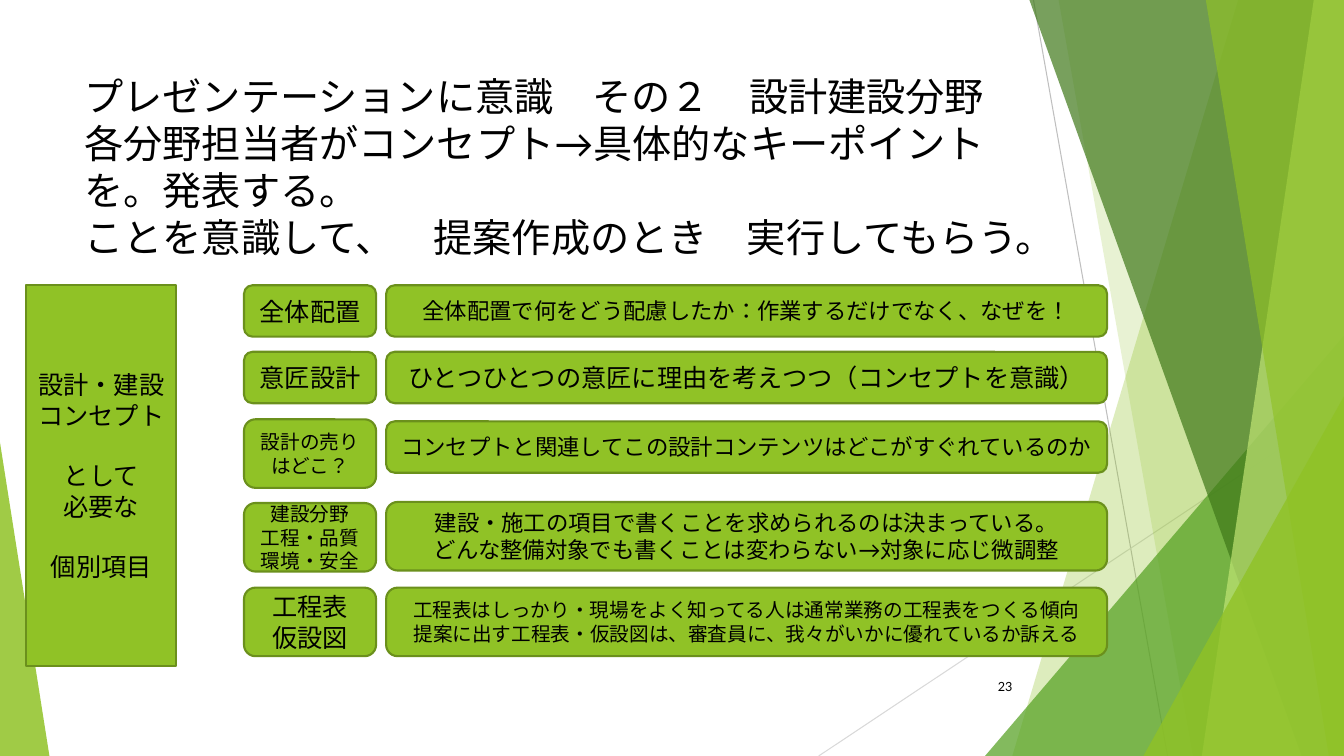
"""Build the slide on presenting the design and construction field."""
from lxml import etree
from pptx import Presentation
from pptx.dml.color import RGBColor
from pptx.enum.lang import MSO_LANGUAGE_ID as LANGUAGE
from pptx.enum.shapes import MSO_CONNECTOR as CONNECTOR, MSO_SHAPE as SHAPE
from pptx.enum.text import MSO_ANCHOR as ANCHOR, PP_ALIGN as ALIGN
from pptx.oxml.ns import qn
from pptx.util import Inches, Pt

COLORS = {
    "lime": "90C226", "olive": "6B901C", "green": "54A021", "forest": "3F7819",
    "pale": "C0E474", "gray": "BFBFBF", "silver": "D9D9D9", "black": "000000",
}
FONT = "Lato"


def write_text(shape, text, size, align, anchor):
    frame = shape.text_frame
    frame.word_wrap = True
    frame.vertical_anchor = anchor
    frame.text = text
    for paragraph in frame.paragraphs:
        paragraph.alignment = align
        for run in paragraph.runs:
            run.font.size = Pt(size)
            run.font.name = FONT
            run.font.language_id = LANGUAGE.JAPANESE
            run.font.color.rgb = RGBColor.from_string(COLORS["black"])
            etree.SubElement(run.font._element, qn("a:ea"), typeface=FONT)


def paint(shape, color, opacity=100, outline=None):
    shape.shadow.inherit = False
    shape.fill.solid()
    shape.fill.fore_color.rgb = RGBColor.from_string(COLORS[color])
    if opacity < 100:
        color_node = shape._element.spPr.find(qn("a:solidFill"))[0]
        etree.SubElement(color_node, qn("a:alpha"), val=str(opacity * 1000))
    if outline:
        shape.line.color.rgb = RGBColor.from_string(COLORS[outline])
        shape.line.width = Pt(1.5)
    else:
        shape.line.fill.background()


presentation = Presentation()
presentation.slide_width = Inches(13.33)
presentation.slide_height = Inches(7.5)
slide = presentation.slides.add_slide(presentation.slide_layouts[6])
shapes = slide.shapes

for x1, y1, x2, y2, color in [
    (10.25, 0, 11.58, 7.5, "gray"),
    (13.33, 4.03, 8.12, 7.5, "silver"),
]:
    line = shapes.add_connector(
        CONNECTOR.STRAIGHT, Inches(x1), Inches(y1), Inches(x2), Inches(y2))
    line.line.color.rgb = RGBColor.from_string(COLORS[color])
    line.line.width = Pt(0.75)
    etree.SubElement(line._element.spPr, qn("a:effectLst"))

bands = [
    ("band", 12.28, 10.04, "lime", 30),
    ("band", 10.5, 11.83, "lime", 20),
    ("triangle", 9.77, 3.33, "green", 72),
    ("band", 10.21, 12.91, "forest", 70),
    ("band", 13.03, 11.92, "pale", 70),
    ("band", 11.96, 13.18, "lime", 65),
    ("triangle", 11.34, 3.93, "lime", 80),
]
for kind, first, second, color, opacity in bands:
    if kind == "band":
        builder = shapes.build_freeform(Inches(first), 0)
        builder.add_line_segments([
            (Inches(13.33), 0), (Inches(13.33), Inches(7.5)),
            (Inches(second), Inches(7.5))], close=True)
        facet = builder.convert_to_shape()
    else:
        facet = shapes.add_shape(
            SHAPE.ISOSCELES_TRIANGLE, Inches(first), Inches(second),
            Inches(13.33 - first), Inches(7.5 - second))
        facet.adjustments[0] = 1
    paint(facet, color, opacity)

left_facet = shapes.add_shape(
    SHAPE.ISOSCELES_TRIANGLE, 0, Inches(4.39), Inches(0.49), Inches(3.11))
left_facet.adjustments[0] = 0
paint(left_facet, "lime", 85)

title = shapes.add_textbox(Inches(0.74), Inches(0.67), Inches(9.77), Inches(2.16))
write_text(
    title,
    "プレゼンテーションに意識　その２　設計建設分野\n"
    "各分野担当者がコンセプト→具体的なキーポイント\n"
    "を。発表する。\n"
    "ことを意識して、　提案作成のとき　実行してもらう。",
    28, ALIGN.LEFT, ANCHOR.TOP)

page_number = shapes.add_textbox(Inches(9.39), Inches(6.61), Inches(0.75), Inches(0.4))
write_text(page_number, "23", 9, ALIGN.RIGHT, ANCHOR.MIDDLE)

concept = shapes.add_shape(
    SHAPE.RECTANGLE, Inches(0.26), Inches(2.83), Inches(1.49), Inches(3.78))
paint(concept, "lime", outline="olive")
write_text(concept, "設計・建設\nコンセプト\nとして\n必要な\n個別項目",
           18, ALIGN.CENTER, ANCHOR.MIDDLE)
for index in (2, 4):
    concept.text_frame.paragraphs[index].space_before = Pt(21.7)

topics = [
    (2.83, 0.51, 18, "全体配置"),
    (3.49, 0.51, 18, "意匠設計"),
    (4.16, 0.68, 14, "設計の売り\nはどこ？"),
    (4.99, 0.68, 14, "建設分野\n工程・品質\n環境・安全"),
    (5.83, 0.68, 18, "工程表\n仮設図"),
]
details = [
    (2.83, 0.51, 16, "全体配置で何をどう配慮したか：作業するだけでなく、なぜを！"),
    (3.49, 0.51, 18, "ひとつひとつの意匠に理由を考えつつ（コンセプトを意識）"),
    (4.18, 0.51, 16, "コンセプトと関連してこの設計コンテンツはどこがすぐれているのか"),
    (4.98, 0.68, 16, "建設・施工の項目で書くことを求められるのは決まっている。\n"
                     "どんな整備対象でも書くことは変わらない→対象に応じ微調整"),
    (5.83, 0.68, 14, "工程表はしっかり・現場をよく知ってる人は通常業務の工程表をつくる傾向\n"
                     "提案に出す工程表・仮設図は、審査員に、我々がいかに優れているか訴える"),
]
for left, width, column in [(2.42, 1.31, topics), (3.83, 7.15, details)]:
    for top, height, size, text in column:
        box = shapes.add_shape(
            SHAPE.ROUNDED_RECTANGLE, Inches(left), Inches(top),
            Inches(width), Inches(height))
        paint(box, "lime", outline="olive")
        write_text(box, text, size, ALIGN.CENTER, ANCHOR.MIDDLE)

presentation.save("out.pptx")
